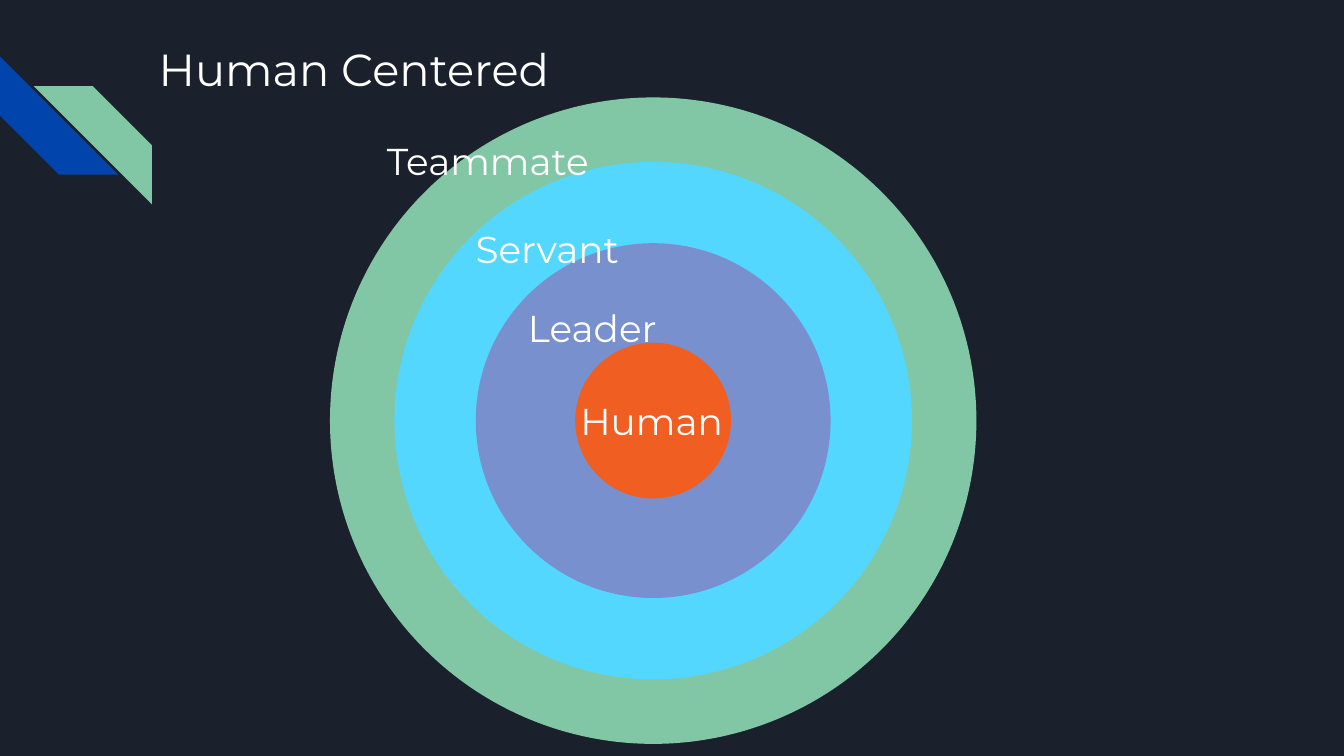
import pptx
import pptx.util
import pptx.dml.color
import pptx.enum.shapes
import pptx.enum.text

Inches = pptx.util.Inches
RGBColor = pptx.dml.color.RGBColor
MSO_SHAPE = pptx.enum.shapes.MSO_SHAPE

NAVY = RGBColor(0x1B, 0x21, 0x2C)
BLUE = RGBColor(0x01, 0x45, 0xAC)
GREEN = RGBColor(0x82, 0xC7, 0xA5)
SKY = RGBColor(0x54, 0xD7, 0xFE)
PERIWINKLE = RGBColor(0x78, 0x90, 0xCD)
ORANGE = RGBColor(0xF1, 0x5E, 0x22)
WHITE = RGBColor(0xFF, 0xFF, 0xFF)
FONT = "Montserrat"

SLIDE_WIDTH = 10
SLIDE_HEIGHT = SLIDE_WIDTH * 9 / 16
TITLE = "Human Centered"
STRIPE_SIZE = 0.88
STRIPES = [(0, 0.42, 270, BLUE), (0.25, 0.64, 90, GREEN)]
CENTER_X, CENTER_Y = 4.86, 3.13
LABEL_HEIGHT = 0.54
RINGS = [
    ("Teammate", 4.81, GREEN, (2.78, 0.93, 2.07)),
    ("Servant", 3.85, SKY, (3.44, 1.58, 1.56)),
    ("Leader", 2.64, PERIWINKLE, (3.83, 2.17, 1.37)),
    ("Human", 1.16, ORANGE, (4.22, 2.86, 1.56)),
]


def add_filled(slide, preset, left, top, size, color):
    shape = slide.shapes.add_shape(
        preset, Inches(left), Inches(top), Inches(size), Inches(size))
    shape.shadow.inherit = False
    shape.fill.solid()
    shape.fill.fore_color.rgb = color
    shape.line.fill.background()
    return shape


def write_text(shape, text, size, inset, auto_size):
    frame = shape.text_frame
    frame.text = text
    frame.word_wrap = True
    frame.auto_size = auto_size
    frame.vertical_anchor = pptx.enum.text.MSO_ANCHOR.TOP
    frame.margin_left = frame.margin_right = Inches(inset)
    frame.margin_top = frame.margin_bottom = Inches(inset)
    paragraph = frame.paragraphs[0]
    paragraph.alignment = pptx.enum.text.PP_ALIGN.LEFT
    paragraph.line_spacing = 1
    paragraph.space_before = pptx.util.Pt(0)
    paragraph.font.name = FONT
    paragraph.font.size = pptx.util.Pt(size)
    paragraph.font.color.rgb = WHITE


presentation = pptx.Presentation()
presentation.slide_width = Inches(SLIDE_WIDTH)
presentation.slide_height = Inches(SLIDE_HEIGHT)
slide = presentation.slides.add_slide(presentation.slide_layouts[5])
slide.background.fill.solid()
slide.background.fill.fore_color.rgb = NAVY

for left, top, rotation, color in STRIPES:
    stripe = add_filled(slide, MSO_SHAPE.DIAGONAL_STRIPE, left, top, STRIPE_SIZE, color)
    stripe.adjustments[0] = 0.5
    stripe.rotation = rotation

for label, diameter, color, place in RINGS:
    add_filled(slide, MSO_SHAPE.OVAL, CENTER_X - diameter / 2,
               CENTER_Y - diameter / 2, diameter, color)

title = slide.shapes.title
title.left, title.top = Inches(1.15), Inches(0.28)
title.width, title.height = Inches(3.58), Inches(1)
write_text(title, TITLE, 24, 0.03, pptx.enum.text.MSO_AUTO_SIZE.NONE)

for label, diameter, color, (left, top, width) in reversed(RINGS):
    box = slide.shapes.add_textbox(
        Inches(left), Inches(top), Inches(width), Inches(LABEL_HEIGHT))
    write_text(box, label, 20, 0.1, pptx.enum.text.MSO_AUTO_SIZE.SHAPE_TO_FIT_TEXT)

presentation.save("out.pptx")
